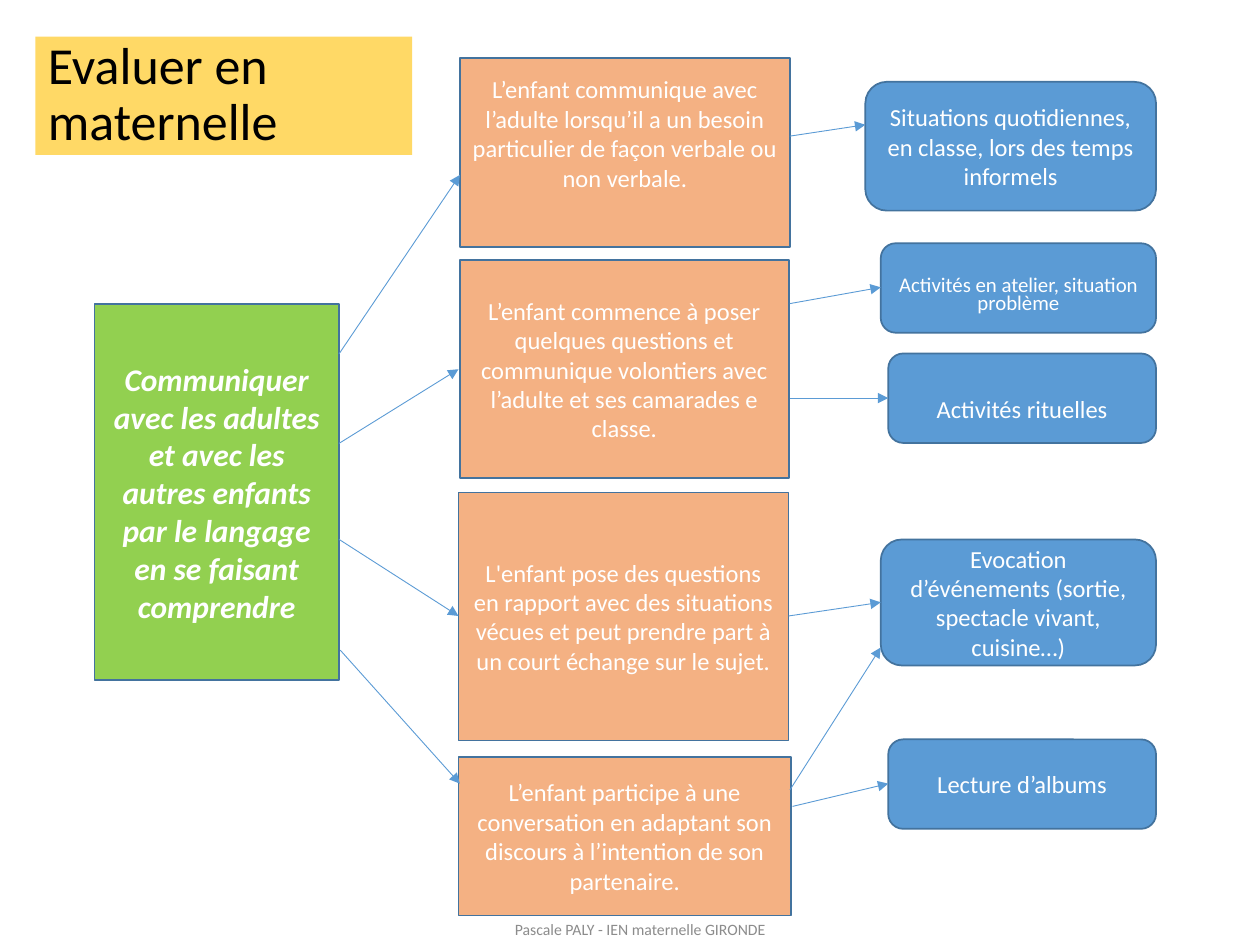
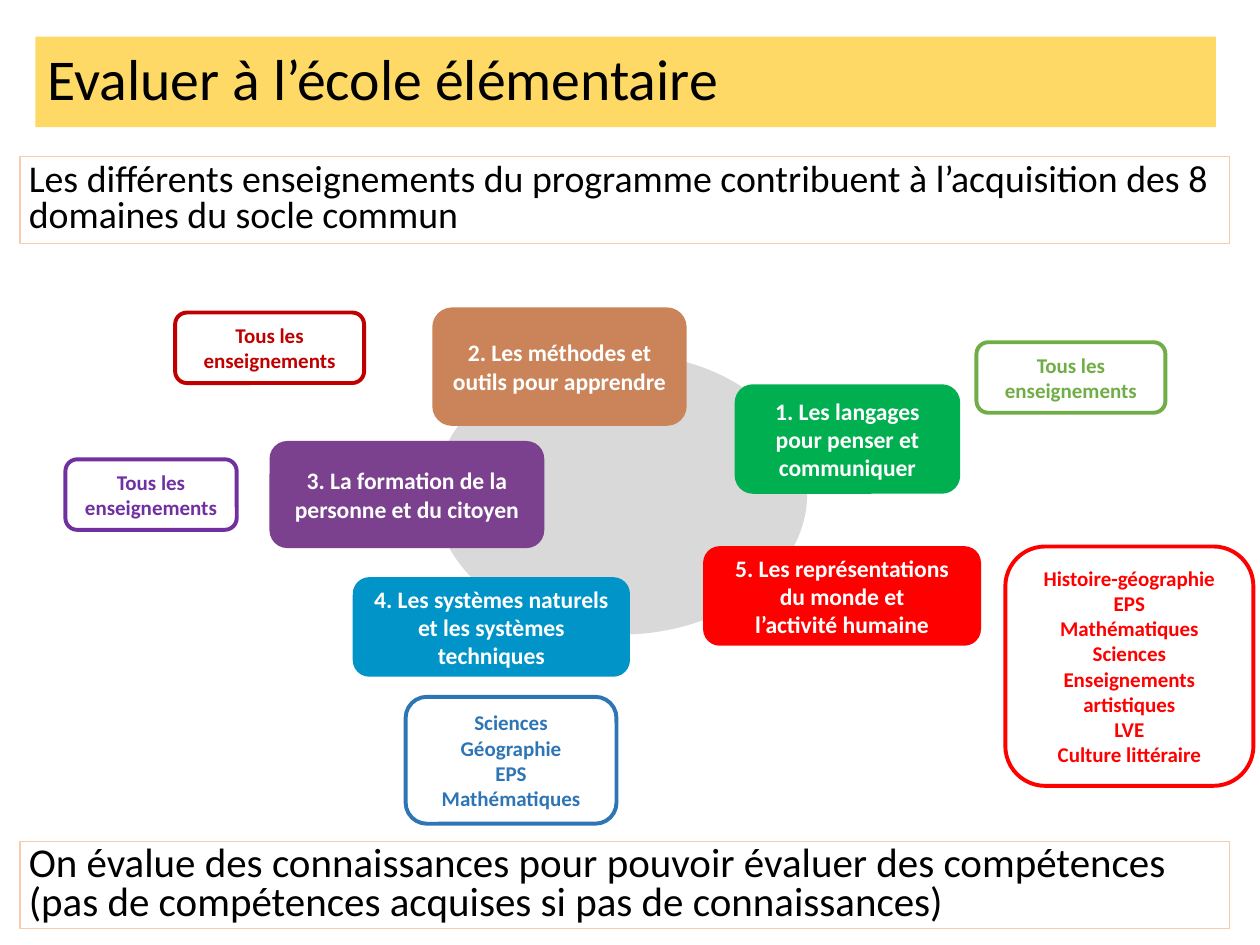
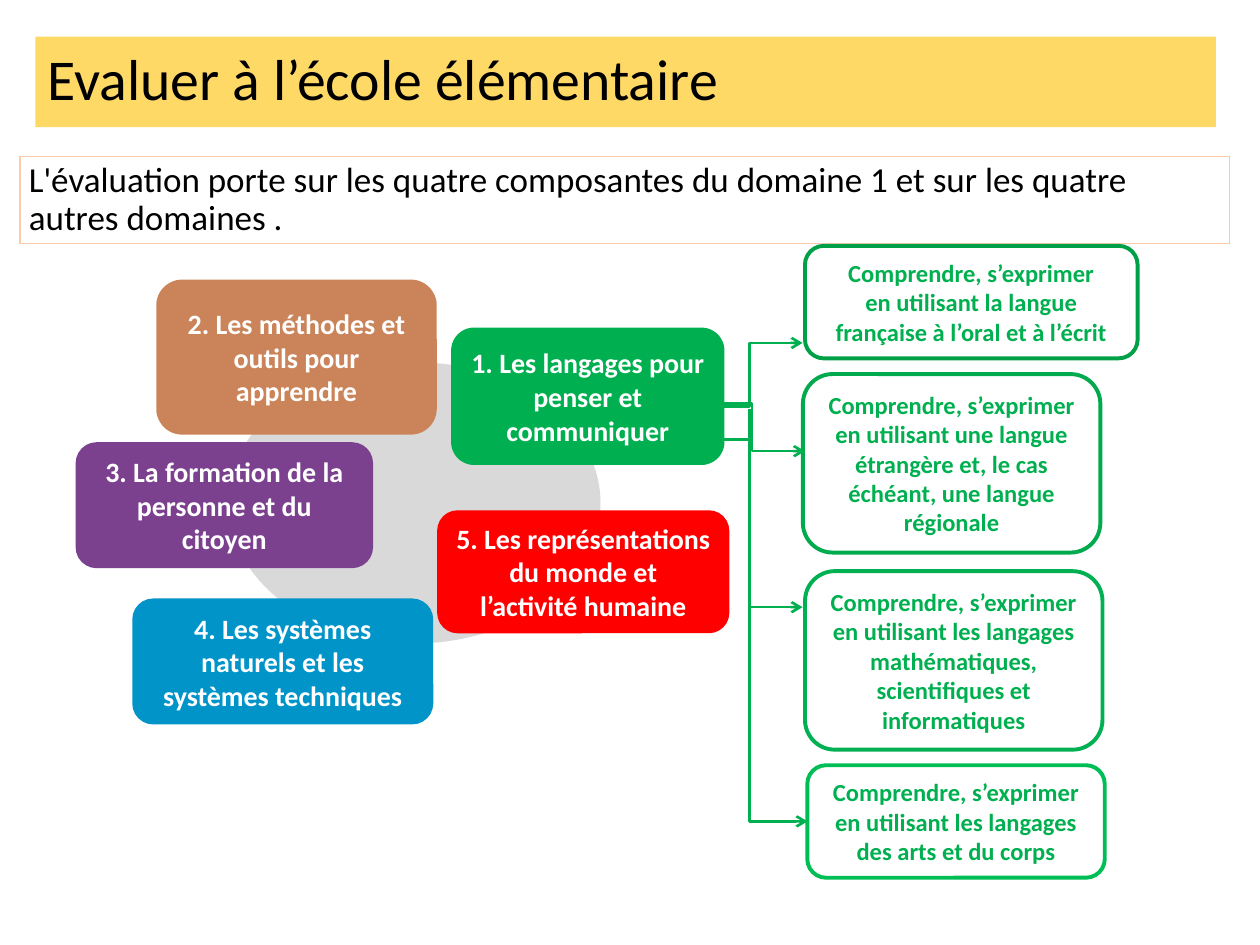
from lxml import etree
from pptx import Presentation
from pptx import util as u
from pptx.dml.color import RGBColor
from pptx.enum import shapes, text as t
from pptx.oxml import ns

Pt = u.Pt
color = RGBColor.from_string
RECTANGLE = shapes.MSO_SHAPE.RECTANGLE
ROUNDED = shapes.MSO_SHAPE.ROUNDED_RECTANGLE
OVAL = shapes.MSO_SHAPE.OVAL


def add_text(slide, content, bounds, kind=RECTANGLE, fill=None, line=None, line_width=1,
             font_color="FFFFFF", size=14, bold=False, italic=False, centered=True,
             spacing=1.0, margins=(7.2, 3.6, 7.2, 3.6)):
    bounds = [Pt(value) for value in bounds]
    if kind is None:
        shape = slide.shapes.add_textbox(*bounds)
    else:
        shape = slide.shapes.add_shape(kind, *bounds)
        shape.shadow.inherit = False
    if fill:
        shape.fill.solid()
        shape.fill.fore_color.rgb = color(fill)
    else:
        shape.fill.background()
    if line:
        shape.line.color.rgb = color(line)
        shape.line.width = Pt(line_width)
    else:
        shape.line.fill.background()
    frame = shape.text_frame
    frame.word_wrap = True
    frame.vertical_anchor = t.MSO_ANCHOR.MIDDLE
    frame.margin_left, frame.margin_top, frame.margin_right, frame.margin_bottom = map(Pt, margins)
    frame.text = content
    for paragraph in frame.paragraphs:
        paragraph.alignment = t.PP_ALIGN.CENTER if centered else t.PP_ALIGN.LEFT
        paragraph.line_spacing = spacing
        for run in paragraph.runs:
            run.font.name = "Calibri"
            run.font.size = Pt(size)
            run.font.bold = bold
            run.font.italic = italic
            run.font.color.rgb = color(font_color)


def add_arrow(slide, points, line, width, head, kind=shapes.MSO_CONNECTOR.STRAIGHT, bend=None):
    connector = slide.shapes.add_connector(kind, *[Pt(value) for value in points])
    connector.line.color.rgb = color(line)
    connector.line.width = Pt(width)
    etree.SubElement(connector.line._get_or_add_ln(), ns.qn("a:tailEnd"), type=head)
    properties = connector._element.spPr
    etree.SubElement(properties, ns.qn("a:effectLst"))
    if bend is not None:
        adjustments = properties.find(".//" + ns.qn("a:avLst"))
        etree.SubElement(adjustments, ns.qn("a:gd"), name="adj1", fmla=f"val {bend}")


title_style = dict(fill="FFD966", font_color="000000", centered=False, spacing=0.9)
band_style = dict(fill="FFFFFF", line="F8CBAD", line_width=0.75, font_color="000000",
                  centered=False, margins=(5, 3, 5, 3))
outlined_style = dict(kind=ROUNDED, line_width=2.25, bold=True)
title_bounds = (20.2, 20.9, 674.6, 51.8)
band_left, band_width, band_height = 11.5, 691.2, 49.7
intro_bounds = (band_left, 89.3, band_width, band_height)
elementary_title = "Evaluer à l’école élémentaire"
domains = [
    ("4. Les systèmes naturels et les systèmes techniques", "0094C8"),
    ("3. La formation de la personne et du citoyen", "7B418E"),
    ("2. Les méthodes et outils pour apprendre", "CB8459"),
    ("5. Les représentations du monde et\nl’activité humaine", "FF0000"),
    ("1. Les langages pour penser et communiquer", "00B050"),
]

presentation = Presentation()
presentation.slide_width = Pt(720)
presentation.slide_height = Pt(540)
kindergarten, subjects, components = [
    presentation.slides.add_slide(presentation.slide_layouts[6]) for _ in range(3)]

box_line = "43739E"
add_text(kindergarten,
         "Communiquer avec les adultes et avec les autres enfants par le langage "
         "en se faisant comprendre",
         (54, 173.5, 139.7, 215.3), fill="92D050", line=box_line, size=18, bold=True, italic=True)

observations = [
    ("L’enfant communique avec l’adulte lorsqu’il a un besoin particulier de façon verbale "
     "ou non verbale.", 262.8, 33.1, 188.6, 108, 25.6),
    ("L’enfant commence à poser quelques questions et communique volontiers avec l’adulte "
     "et ses camarades e classe.", 262.8, 148.7, 187.9, 124.6, 3.6),
    ("L'enfant pose des questions en rapport avec des situations vécues et peut prendre part "
     "à un court échange sur le sujet.", 262, 281.4, 188.6, 141.8, 3.6),
    ("L’enfant participe à une conversation en adaptant son discours à l’intention de son "
     "partenaire.", 262, 432.6, 190, 90.5, 3.6),
]
for content, left, top, width, height, bottom_margin in observations:
    add_text(kindergarten, content, (left, top, width, height), fill="F4B183", line=box_line,
             margins=(7.2, 3.6, 7.2, bottom_margin))

activities_right = 660.6
activities = [
    ("Situations quotidiennes, en classe, lors des temps informels", 494.5, 46.8, 73.6, 14, 1, 3.6),
    ("Activités en atelier, situation problème", 503.3, 139, 51.1, 11.9, 0.7, 13),
    ("Activités rituelles", 507.6, 202, 51.1, 14, 1, 15),
    ("Evocation d’événements (sortie, spectacle vivant, cuisine…)", 503.3, 308.3, 72, 14, 1, 3.6),
    ("Lecture d’albums", 507.6, 422.5, 51.1, 14, 1, 3.6),
]
for content, left, top, height, size, spacing, top_margin in activities:
    add_text(kindergarten, content, (left, top, activities_right - left, height), kind=ROUNDED,
             fill="5B9BD5", line=box_line, size=size, spacing=spacing,
             margins=(7.2, top_margin, 7.2, 3.6))

add_text(kindergarten, "Pascale PALY - IEN maternelle GIRONDE", (262, 521.3, 207.4, 19.4),
         kind=None, size=9, font_color="8C8C8C")

observation_arrows = [
    (193.7, 202.3, 262.8, 100), (193.7, 253.4, 262, 211),
    (193.7, 308.2, 262, 352), (194.4, 371.5, 262.8, 447.8),
]
activity_arrows = [
    (451.4, 77.8, 494.5, 71.3), (451.4, 173.5, 503.3, 164.2), (451.4, 227.5, 507.6, 227.5),
    (450.7, 352, 503.3, 344.2), (452.9, 460.8, 507.6, 447.8), (451.4, 451.4, 503.3, 370),
]
for points in observation_arrows + activity_arrows:
    add_arrow(kindergarten, points, "5B9BD5", 0.5, "triangle")
add_text(kindergarten, "Evaluer en maternelle", (20.2, 20.9, 215.3, 67.7), size=29.7, **title_style)

domain_slides = [
    (subjects, (249.1, 202.3), 13.5, [
        (201.6, 329.8, 158.4, 56.9), (154, 252, 157, 61.2), (247, 175.7, 145.4, 67.7),
        (401.8, 312.1, 158.8, 56.9), (419.8, 219.6, 128.9, 62.6)]),
    (components, (131, 207.4), 16, [
        (75.6, 342, 172, 72), (43.2, 252.7, 170, 72), (89.3, 159.8, 160.3, 88.6),
        (249.8, 291.6, 167, 70.3), (257.8, 187.2, 156.2, 78.5)]),
]
for slide, circle_corner, size, positions in domain_slides:
    add_text(slide, "", (*circle_corner, 211.7, 159.8), kind=OVAL, fill="D9D9D9", line="D9D9D9")
    for (content, fill), bounds in zip(domains, positions):
        add_text(slide, content, bounds, kind=ROUNDED, fill=fill, size=size, bold=True)
    add_text(slide, elementary_title, title_bounds, size=33, **title_style)

add_text(subjects,
         "Les différents enseignements du programme contribuent à l’acquisition des 8 domaines "
         "du socle commun", intro_bounds, size=21.6, spacing=0.8, **band_style)
add_text(subjects,
         "On évalue des connaissances pour pouvoir évaluer des compétences "
         "(pas de compétences acquises si pas de connaissances)",
         (band_left, 481, band_width, band_height), size=23.4, spacing=0.8, **band_style)

all_subjects = "Tous les enseignements"
subject_lists = [
    ("Histoire-géographie\nEPS\nMathématiques\nSciences\nEnseignements artistiques\nLVE\n"
     "Culture littéraire", (574.5, 312.3, 141.8, 136.8), "FF0000"),
    ("Sciences\nGéographie\nEPS\nMathématiques", (231.8, 398.2, 120.5, 72.5), "2E75B6"),
    (all_subjects, (37.4, 262.5, 97.9, 40.3), "7030A0"),
    (all_subjects, (100.1, 178.6, 108, 40.3), "C00000"),
    (all_subjects, (558, 195.6, 108, 40.3), "70AD47"),
]
for content, bounds, tint in subject_lists:
    add_text(subjects, content, bounds, line=tint, font_color=tint, size=12, **outlined_style)

add_text(components,
         "L'évaluation porte sur les quatre composantes du domaine 1 et sur les quatre autres "
         "domaines .", intro_bounds, size=20, spacing=0.9, **band_style)
language_components = [
    ("Comprendre, s’exprimer\nen utilisant la langue française à l’oral et à l’écrit",
     (460, 140.5, 190.1, 64.3), "00A048"),
    ("Comprendre, s’exprimer en utilisant une langue étrangère et, le cas échéant, "
     "une langue régionale", (458.8, 213.8, 170, 102), "00AA4D"),
    ("Comprendre, s’exprimer\nen utilisant les langages mathématiques, scientifiques et "
     "informatiques", (460, 326.4, 170, 102), "00B052"),
    ("Comprendre, s’exprimer\nen utilisant les langages\ndes arts et du corps",
     (461.3, 437.3, 170, 64.3), "00BE56"),
]
for content, bounds, line in language_components:
    add_text(components, content, bounds, line=line, font_color="00B050", **outlined_style)

component_arrows = [
    ((398.2, 232.3, 458.6, 196), 50000), ((399.6, 230.4, 460, 257.8), 50000),
    ((398.2, 251.3, 458.6, 347), 50000), ((428.4, 234, 461.5, 469.4), 0),
]
for points, bend in component_arrows:
    add_arrow(components, points, "00B050", 1.5, "arrow", shapes.MSO_CONNECTOR.ELBOW, bend)

presentation.save("out.pptx")
